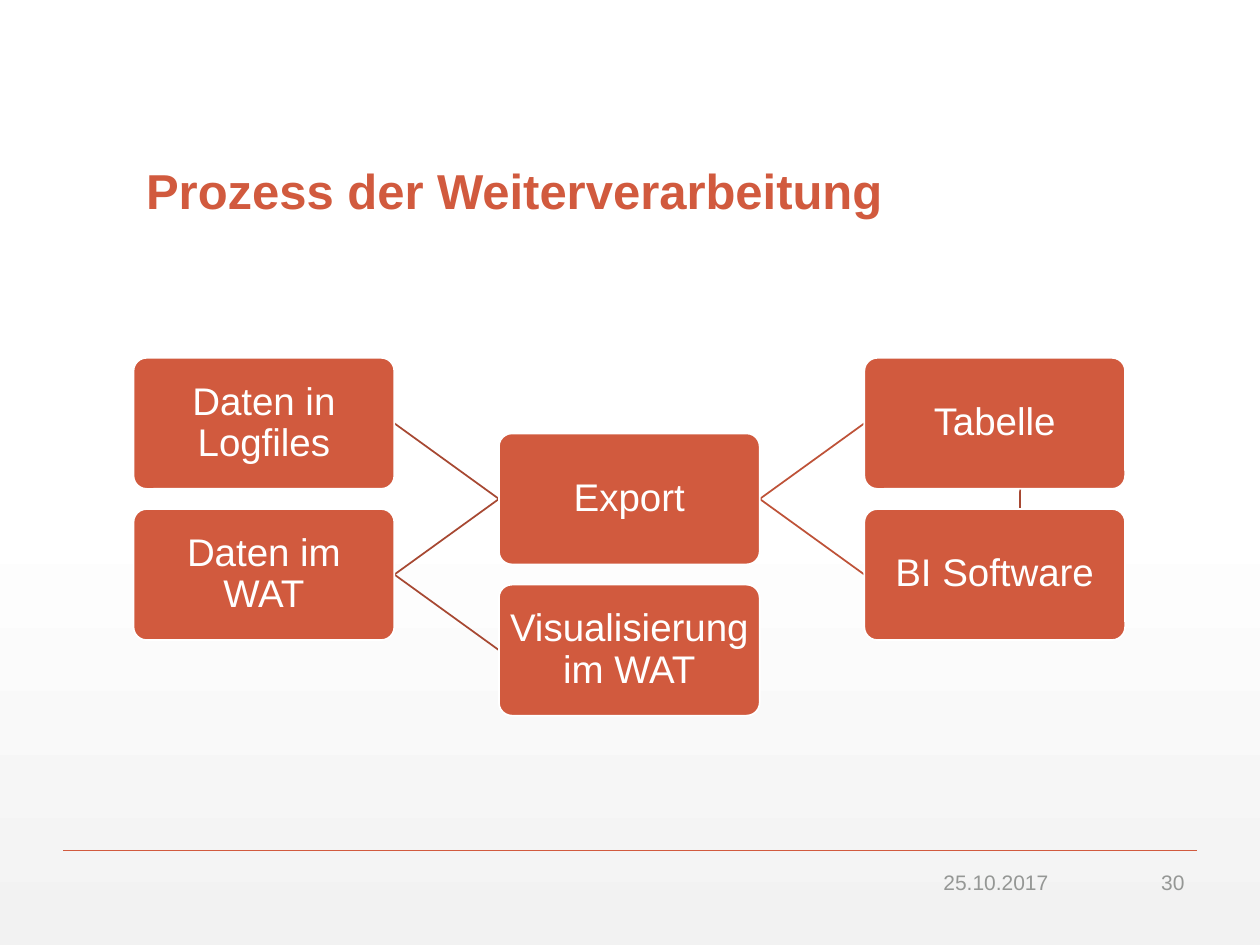
from lxml import etree
from pptx import Presentation
from pptx.dml.color import RGBColor
from pptx.enum import shapes, text
from pptx.oxml.ns import qn
from pptx.util import Inches, Pt

TITLE = "Prozess der Weiterverarbeitung"
# name: (label, column, row in half steps)
BOXES = {
    "logfiles": ("Daten in Logfiles", 0, 0),
    "wat": ("Daten im WAT", 0, 2),
    "export": ("Export", 1, 1),
    "visual": ("Visualisierung im WAT", 1, 3),
    "sheet": ("Tabelle", 2, 0),
    "bi": ("BI Software", 2, 2),
}
LINKS = [
    ("logfiles", "export", "link_dark"),
    ("wat", "export", "link_dark"),
    ("wat", "visual", "link_dark"),
    ("export", "sheet", "link_light"),
    ("export", "bi", "link_light"),
]
FOOTERS = [("25.10.2017", 7, 1.42), ("30", 8.75, 0.75)]

THEME = {
    "font": "Arial", "accent": "D15A3E", "white": "FFFFFF", "grey": "959795",
    "link_dark": "A74832", "link_light": "BE5238", "shade": "F2F2F2",
    "title_size": 28, "box_size": 22, "footer_size": 12,
}
LEFT, TOP = 1.06, 2.84
BOX_WIDTH, BOX_HEIGHT = 2.07, 1.04
COLUMN_STEP, HALF_ROW = 2.9, 0.6


def color(name):
    return RGBColor.from_string(THEME[name])


def write(shape, content, size, color_name, align, anchor, inset=(0.1, 0.05),
          bold=False, spacing=1.0):
    frame = shape.text_frame
    side, edge = map(Inches, inset)
    frame_format = {
        "word_wrap": True, "auto_size": text.MSO_AUTO_SIZE.NONE,
        "vertical_anchor": anchor, "margin_left": side, "margin_right": side,
        "margin_top": edge, "margin_bottom": edge,
    }
    for name, value in frame_format.items():
        setattr(frame, name, value)
    paragraph = frame.paragraphs[0]
    paragraph.alignment, paragraph.line_spacing = align, spacing
    run = paragraph.add_run()
    run.text = content
    font_format = {"name": THEME["font"], "size": Pt(THEME[size]), "bold": bold}
    for name, value in font_format.items():
        setattr(run.font, name, value)
    run.font.color.rgb = color(color_name)


def add_line(slide, start, end, color_name):
    line = slide.shapes.add_connector(
        shapes.MSO_CONNECTOR.STRAIGHT, *map(Inches, (*start, *end)))
    line.line.color.rgb = color(color_name)
    line.line.width = Pt(1)
    etree.SubElement(line._element.spPr, qn("a:effectLst"))


def box_corner(name):
    _, column, row = BOXES[name]
    return LEFT + column * COLUMN_STEP, TOP + row * HALF_ROW


def add_box(slide, name):
    box = slide.shapes.add_shape(
        shapes.MSO_SHAPE.ROUNDED_RECTANGLE,
        *map(Inches, (*box_corner(name), BOX_WIDTH, BOX_HEIGHT)))
    box.adjustments[0] = 0.1
    box.shadow.inherit = False
    box.fill.solid()
    box.fill.fore_color.rgb = color("accent")
    box.line.color.rgb = color("white")
    box.line.width = Pt(1)
    write(box, BOXES[name][0], "box_size", "white", text.PP_ALIGN.CENTER,
          text.MSO_ANCHOR.MIDDLE, inset=(0.05, 0.05), spacing=0.9)


def set_background(slide):
    fill = slide.background.fill
    fill.gradient()
    fill.gradient_angle = 270
    for stop, (position, name) in zip(fill.gradient_stops,
                                      [(0.53, "white"), (1, "shade")]):
        stop.position = position
        stop.color.rgb = color(name)


def main():
    presentation = Presentation()
    presentation.slide_width, presentation.slide_height = Inches(10), Inches(7.5)
    slide = presentation.slides.add_slide(presentation.slide_layouts[5])
    set_background(slide)

    title = slide.shapes.title
    title.left, title.top, title.width, title.height = map(
        Inches, (LEFT, 0.55, 7.88, 1.25))
    write(title, TITLE, "title_size", "accent", text.PP_ALIGN.LEFT,
          text.MSO_ANCHOR.BOTTOM, bold=True, spacing=0.9)

    add_line(slide, (0.5, 6.75), (9.5, 6.75), "accent")
    for content, left, width in FOOTERS:
        footer = slide.shapes.add_textbox(*map(Inches, (left, 6.88, width, 0.24)))
        write(footer, content, "footer_size", "grey", text.PP_ALIGN.RIGHT,
              text.MSO_ANCHOR.MIDDLE)

    for source, target, color_name in LINKS:
        (x1, y1), (x2, y2) = box_corner(source), box_corner(target)
        middle = BOX_HEIGHT / 2
        add_line(slide, (x1 + BOX_WIDTH, y1 + middle), (x2, y2 + middle), color_name)
    add_line(slide, (8.1, 3.52), (8.09, 4.54), "link_dark")
    for name in BOXES:
        add_box(slide, name)
    presentation.save("out.pptx")


if __name__ == "__main__":
    main()
